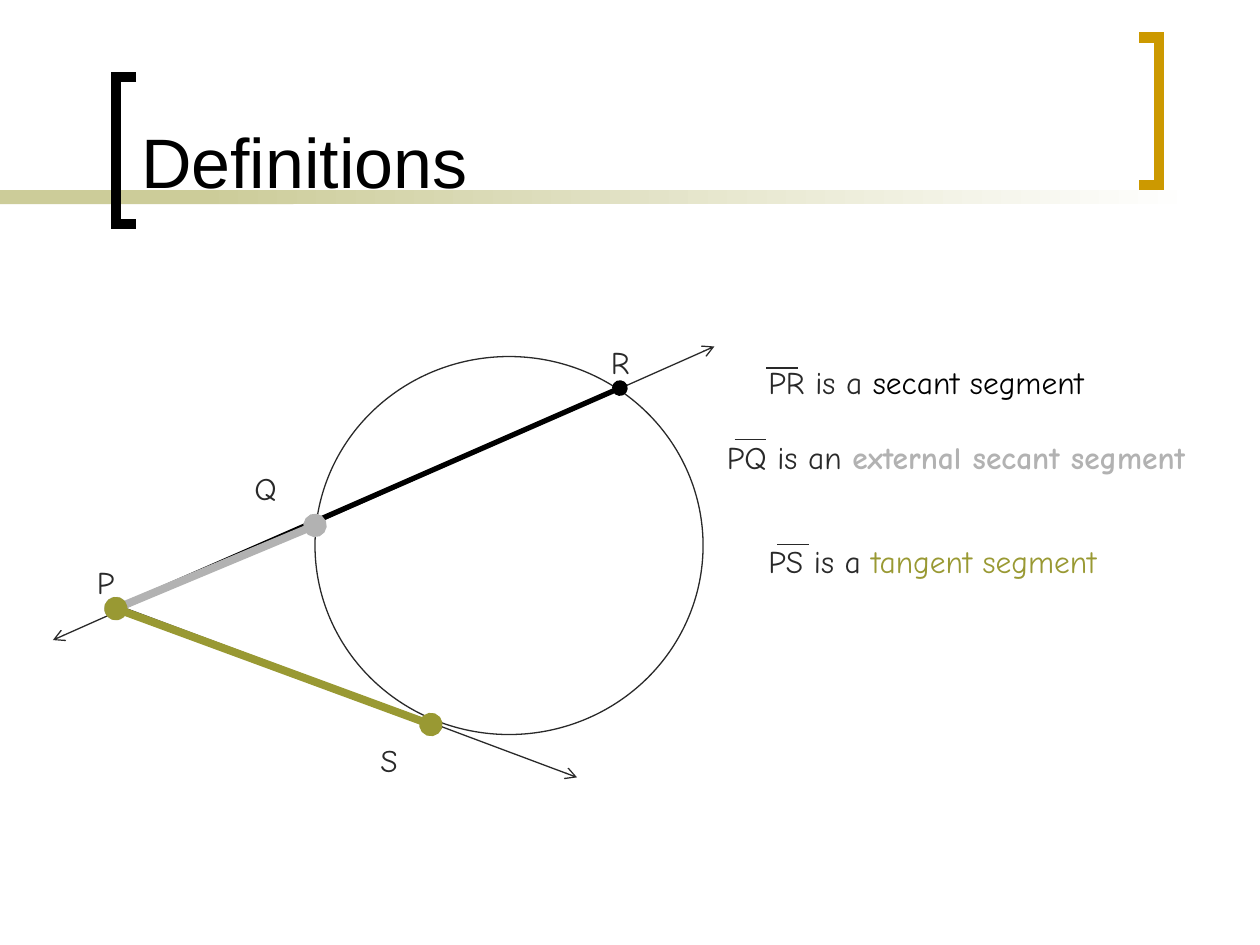
from lxml import etree
from pptx import Presentation
from pptx.dml.color import RGBColor
from pptx.enum import shapes, text
from pptx.oxml import ns
from pptx.util import Inches, Pt

BLACK = RGBColor(0, 0, 0)
WHITE = RGBColor(0xFF, 0xFF, 0xFF)
INK = RGBColor(0x29, 0x29, 0x29)
SAND = RGBColor(0xCC, 0xCC, 0x99)
GOLD = RGBColor(0xCC, 0x99, 0x00)
GREY = RGBColor(0xB2, 0xB2, 0xB2)
OLIVE = RGBColor(0x99, 0x99, 0x33)

P, Q, R, S = (0.92, 4.83), (2.5, 4.17), (4.92, 3.08), (3.42, 5.75)


def add_bar(s, left, width, end):
    """Add a piece of the title rule, fading from sand to the end colour."""
    sp = s.shapes.add_shape(shapes.MSO_SHAPE.RECTANGLE, Inches(left),
                            Inches(1.51), Inches(width), Inches(0.11))
    sp.shadow.inherit = False
    sp.line.fill.background()
    if end == SAND:
        sp.fill.solid()
        sp.fill.fore_color.rgb = SAND
        return
    sp.fill.gradient()
    sp.fill.gradient_angle = 0
    for stop, color, position in zip(sp.fill.gradient_stops, (SAND, end), (0, 1)):
        stop.color.rgb = color
        stop.position = position


def add_bracket(s, spine, tip, top, color):
    """Add a square bracket whose arms run from the spine to the tip."""
    bottom = top + 1.17
    points = [(Inches(x), Inches(y)) for x, y in
              ((tip, top), (spine, top), (spine, bottom), (tip, bottom))]
    builder = s.shapes.build_freeform(*points[0])
    builder.add_line_segments(points[1:], close=False)
    sp = builder.convert_to_shape()
    sp.shadow.inherit = False
    sp.fill.background()
    sp.line.color.rgb = color
    sp.line.width = Pt(6)
    etree.SubElement(sp.line._get_or_add_ln(), ns.qn("a:miter"), lim="800000")


def add_title(s, words):
    """Place and format the title in front of the rule."""
    title = s.shapes.title
    title.left, title.top = Inches(1.02), Inches(0.11)
    title.width, title.height = Inches(7.83), Inches(1.55)
    tf = title.text_frame
    tf.text = words
    tf.vertical_anchor = text.MSO_ANCHOR.BOTTOM
    p = tf.paragraphs[0]
    p.alignment = text.PP_ALIGN.LEFT
    p.font.name, p.font.size = "Arial", Pt(40)
    p.font.color.rgb = BLACK
    title.element.getparent().append(title.element)


def add_circle(s, left, top, width, height):
    """Add the outlined circle."""
    sp = s.shapes.add_shape(shapes.MSO_SHAPE.OVAL, Inches(left), Inches(top),
                            Inches(width), Inches(height))
    sp.shadow.inherit = False
    sp.fill.background()
    sp.line.color.rgb = INK
    sp.line.width = Pt(0.75)


def add_line(container, start, end, color=INK, width=0.75, head=None, tail=None):
    """Add a straight line with optional end marks."""
    line = container.shapes.add_connector(
        shapes.MSO_CONNECTOR.STRAIGHT, *map(Inches, start + end))
    line.line.color.rgb = color
    line.line.width = Pt(width)
    ln = line.line._get_or_add_ln()
    for tag, mark in (("a:headEnd", head), ("a:tailEnd", tail)):
        if mark:
            etree.SubElement(ln, ns.qn(tag), type=mark)
    etree.SubElement(ln.getparent(), ns.qn("a:effectLst"))


def add_text(container, left, top, width, *runs):
    """Add a one-line text box from (words, colour, bold) runs."""
    sp = container.shapes.add_textbox(Inches(left), Inches(top),
                                      Inches(width), Inches(0.4))
    tf = sp.text_frame
    tf.word_wrap = True
    tf.auto_size = text.MSO_AUTO_SIZE.SHAPE_TO_FIT_TEXT
    p = tf.paragraphs[0]
    p.font.name, p.font.size = "Comic Neue", Pt(18)
    for words, color, bold in runs:
        r = p.add_run()
        r.text = words
        r.font.name, r.font.size = "Comic Neue", Pt(18)
        r.font.color.rgb = color
        r.font.bold = bold


def add_definition(container, box, bar, lead, term, color, bold=False):
    """Add a definition with an overbar above the segment's name."""
    add_text(container, *box, (lead, INK, False), (term, color, bold))
    x, y = bar
    add_line(container, (x, y), (x + 0.25, y))


def main():
    """Build the slide on secant and tangent segments."""
    prs = Presentation()
    prs.slide_width, prs.slide_height = Inches(10), Inches(7.5)
    s = prs.slides.add_slide(prs.slide_layouts[5])

    add_bar(s, 0, 2.33, SAND)
    add_bar(s, 1.58, 7.92, WHITE)
    add_bracket(s, 0.92, 1.08, 0.61, BLACK)
    add_bracket(s, 9.2, 9.04, 0.3, GOLD)
    add_title(s, "Definitions")

    add_circle(s, 2.5, 2.83, 3.08, 3)
    add_line(s, (5.67, 2.75), (0.42, 5.08), head="arrow", tail="arrow")
    add_line(s, (4.58, 6.17), (1, 4.83), head="arrow")
    for name, left, top in (("R", 4.75, 2.67), ("Q", 1.92, 3.67),
                            ("P", 0.67, 4.42), ("S", 2.92, 5.83)):
        add_text(s, left, top, 0.67, (name, INK, False))
    for end, color, width in ((R, BLACK, 3), (Q, GREY, 4.5), (S, OLIVE, 4.5)):
        add_line(s, P, end, color, width, head="oval", tail="oval")

    add_definition(s, (6, 2.83, 3.17), (6.08, 2.92),
                   "PR is a ", "secant segment", BLACK)
    add_definition(s.shapes.add_group_shape(), (5.67, 3.43, 4.42), (5.83, 3.49),
                   "PQ is an ", "external secant segment", GREY, bold=True)
    add_definition(s, (6, 4.25, 3.17), (6.17, 4.32),
                   "PS is a ", "tangent segment", OLIVE)
    prs.save("out.pptx")


if __name__ == "__main__":
    main()
